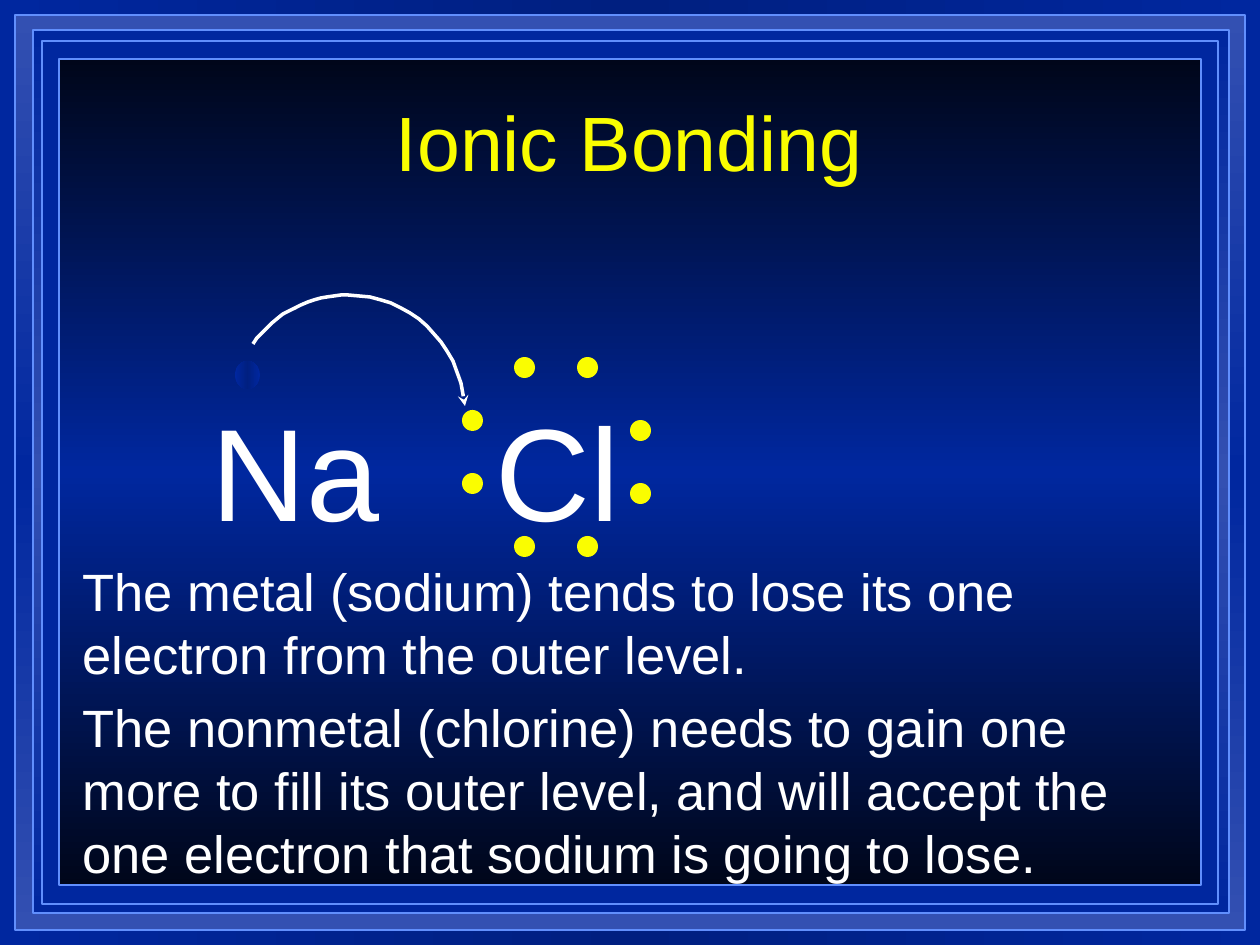
from copy import deepcopy

from pptx import Presentation
from pptx import util as u
from pptx.dml.color import RGBColor
from pptx.enum import shapes, text
from pptx.oxml.ns import qn
from pptx.oxml.xmlchemy import OxmlElement

SCALE = 914400 / 126
BLUE, DEEP, EDGE = "00279F", "001F80", "618FFD"
YELLOW, WHITE = "FAFD00", "FFFFFF"
DOT = 21


def px(n):
    return u.Emu(round(n * SCALE))


def rgb(color):
    return RGBColor.from_string(color)


def set_gradient(fill, host, edge, middle, angle):
    fill.gradient()
    fill.gradient_angle = angle
    for stop, color, pos in zip(fill.gradient_stops, (edge, middle), (0, 0.5)):
        stop.color.rgb = rgb(color)
        stop.position = pos
    stops = host.find(".//" + qn("a:gsLst"))
    last = deepcopy(stops[0])
    last.set("pos", "100000")
    stops.append(last)


def add_preset(group, kind, x, y, w, h):
    sp = group.add_shape(kind, px(x), px(y), px(w), px(h))
    sp.shadow.inherit = False
    sp.line.fill.background()
    return sp


def add_frame(s, x, y, w, h, edge, middle):
    sp = add_preset(s.shapes, shapes.MSO_SHAPE.RECTANGLE, x, y, w, h)
    if edge == middle:
        sp.fill.solid()
        sp.fill.fore_color.rgb = rgb(edge)
    else:
        set_gradient(sp.fill, sp.element, edge, middle, 90)
    sp.line.color.rgb = rgb(EDGE)
    sp.line.width = u.Pt(1)


def add_dot(group, x, y):
    sp = add_preset(group, shapes.MSO_SHAPE.OVAL, x, y, DOT, DOT)
    sp.fill.solid()
    sp.fill.fore_color.rgb = rgb(YELLOW)


def write(sp, paragraphs, size, color, top, before=0, align=text.PP_ALIGN.LEFT):
    tf = sp.text_frame
    tf.word_wrap = True
    tf.auto_size = text.MSO_AUTO_SIZE.NONE
    tf.vertical_anchor = text.MSO_ANCHOR.TOP
    tf.margin_left = tf.margin_right = u.Inches(0.1)
    tf.margin_top, tf.margin_bottom = px(top), 0
    for i, line in enumerate(paragraphs):
        p = tf.add_paragraph() if i else tf.paragraphs[0]
        p.alignment = align
        p.line_spacing = u.Pt(size * 1.2)
        p.space_before = u.Pt(before if i else 0)
        r = p.add_run()
        r.text = line
        r.font.name = "Arial"
        r.font.size = u.Pt(size)
        r.font.color.rgb = rgb(color)


def add_text(s, x, y, w, h, paragraphs, size, top, before=0):
    sp = s.shapes.add_textbox(px(x), px(y), px(w), px(h))
    write(sp, paragraphs, size, WHITE, top, before)


def bezier(points, steps=16):
    for i in range(1, steps + 1):
        t = i / steps
        weights = ((1 - t) ** 3, 3 * t * (1 - t) ** 2, 3 * t * t * (1 - t), t ** 3)
        yield tuple(sum(k * pt[axis] for k, pt in zip(weights, points)) for axis in (0, 1))


def add_curved_arrow(s, start, *curves):
    builder = s.shapes.build_freeform(*start, scale=SCALE)
    for curve in curves:
        builder.add_line_segments(list(bezier((start, *curve))), close=False)
        start = curve[-1]
    sp = builder.convert_to_shape()
    sp.shadow.inherit = False
    sp.fill.background()
    sp.line.color.rgb = rgb(WHITE)
    sp.line.width = u.Pt(2)
    tail = OxmlElement("a:tailEnd")
    tail.set("type", "stealth")
    sp.line._get_or_add_ln().append(tail)


def add_title(s, x, y, w, h, title):
    sp = s.shapes.title
    s.shapes.element.append(sp.element)
    sp.left, sp.top, sp.width, sp.height = map(px, (x, y, w, h))
    write(sp, [title], 44, YELLOW, 10, align=text.PP_ALIGN.CENTER)


def main():
    prs = Presentation()
    prs.slide_width, prs.slide_height = px(1260), px(945)
    s = prs.slides.add_slide(prs.slide_layouts[5])
    set_gradient(s.background.fill, s.element, BLUE, DEEP, 0)

    add_frame(s, 15, 15, 1230, 915, "3350B2", BLUE)
    add_frame(s, 33, 30, 1196, 883, BLUE, "3350B2")
    add_frame(s, 42, 41, 1176, 863, BLUE, BLUE)
    add_frame(s, 59, 59, 1142, 826, "00061A", BLUE)
    add_title(s, 94, 84, 1071, 105, "Ionic Bonding")

    add_text(s, 199, 378, 199, 170, ["Na"], 75, 12)
    add_text(s, 483, 378, 158, 170, ["Cl"], 75, 12)
    for y in (357, 536):
        for x in (514, 577):
            add_dot(s.shapes, x, y)
    pair = s.shapes.add_group_shape()
    for y in (483, 420):
        add_dot(pair.shapes, 630, y)
    for y in (473, 410):
        add_dot(s.shapes, 462, y)
    add_curved_arrow(s, (253, 344),
                     ((276, 312), (311, 295), (348, 295)),
                     ((408, 295), (459, 341), (465, 406)))

    add_dot(s.shapes, 237, 365)
    cover = add_preset(s.shapes, shapes.MSO_SHAPE.OVAL, 235, 361, 25, 28)
    set_gradient(cover.fill, cover.element, BLUE, DEEP, 0)

    add_text(s, 70, 551, 1126, 340, [
        "The metal (sodium) tends to lose its one electron from the outer level.",
        "The nonmetal (chlorine) needs to gain one more to fill its outer level, "
        "and will accept the one electron that sodium is going to lose.",
    ], 30, 8, before=6)
    prs.save("out.pptx")


if __name__ == "__main__":
    main()
